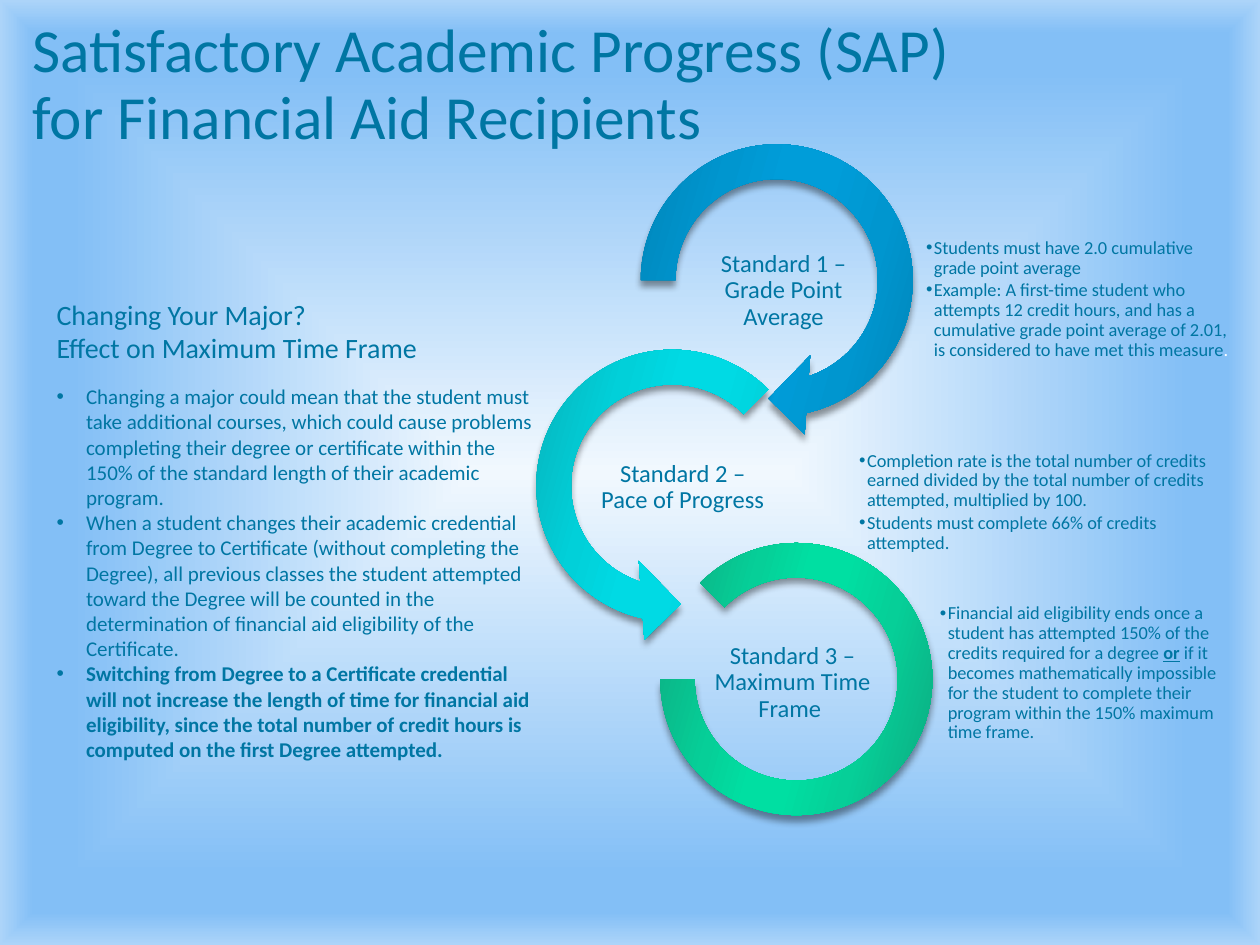
from lxml import etree
from pptx import Presentation, util as u
from pptx.dml.color import RGBColor
from pptx.enum import shapes, text
from pptx.oxml.ns import qn

COLORS = {"ink": "0076A3", "white": "FFFFFF", "shadow": "000000"}
BACKGROUND = [(0, "F1F8FE"), (85, "83BFF6"), (93, "83BFF6"), (100, "ACD4F9")]
RINGS = {  # edge, shoulder and centre of each ring's sheen
    "blue": ("0080B2", "0096CF", "009DD9"),
    "cyan": ("09AAB2", "01D0D9", "00DAE4"),
    "green": ("0DA97F", "06CF98", "00DFA2"),
}


def child(parent, tag, **attributes):
    element = etree.SubElement(parent, qn(tag))
    for key, value in attributes.items():
        element.set(key, str(value))
    return element


def write(paragraph, words, size=12, color="ink", bold=False, underline=False):
    """Add words to the paragraph; a newline becomes a line break."""
    for index, line in enumerate(words.split("\n")):
        if index:
            paragraph.add_line_break()
        run = paragraph.add_run()
        run.text = line
        font = run.font
        font.name, font.size = "Calibri", u.Pt(size)
        font.bold, font.underline = bold, underline
        font.color.rgb = RGBColor.from_string(COLORS[color])


def gradient_stops(fill, owner, stops):
    """Give fill a gradient with these stops; return it, still without direction."""
    fill.gradient()
    gradient = owner.find(".//" + qn("a:gradFill"))
    for part in list(gradient):
        gradient.remove(part)
    stop_list = child(gradient, "a:gsLst")
    for percent, color in stops:
        stop = child(stop_list, "a:gs", pos=percent * 1000)
        child(stop, "a:srgbClr", val=color)
    return gradient


class SapSlide:
    def __init__(self, slide):
        self.slide = slide

    def background(self, stops):
        gradient = gradient_stops(self.slide.background.fill, self.slide.element, stops)
        glow = child(gradient, "a:path", path="shape")
        child(glow, "a:fillToRect", l=50000, t=50000, r=50000, b=50000)

    def ring(self, kind, left, top, size, adjustments, colors):
        ring = self.slide.shapes.add_shape(
            kind, u.Pt(left), u.Pt(top), u.Pt(size), u.Pt(size))
        for index, value in enumerate(adjustments):
            ring.adjustments[index] = value
        edge, shoulder, centre = colors
        sheen = zip((0, 30, 45, 55, 73, 100),
                    (edge, shoulder, centre, centre, shoulder, edge))
        properties = ring.element.spPr
        gradient = gradient_stops(ring.fill, properties, sheen)
        child(gradient, "a:lin", ang=950000, scaled=1)
        ring.line.fill.background()
        # Soft shadow straight below
        ring.shadow.inherit = False
        shadow = child(properties.find(qn("a:effectLst")), "a:outerShdw",
                       blurRad=u.Pt(4), dist=u.Pt(3.4), dir=5400000, rotWithShape=0)
        tint = child(shadow, "a:srgbClr", val=COLORS["shadow"])
        child(tint, "a:alpha", val=40000)

    def textbox(self, box, paragraphs, size, inset=None, middle=True, spacing=0.9,
                after=0, align=text.PP_ALIGN.LEFT, indent=0):
        """Each paragraph is a list of (words, format) runs."""
        frame = self.slide.shapes.add_textbox(*map(u.Pt, box)).text_frame
        frame.word_wrap = True
        frame.vertical_anchor = text.MSO_ANCHOR.MIDDLE if middle else text.MSO_ANCHOR.TOP
        if inset is not None:
            frame.margin_left = frame.margin_right = u.Pt(inset)
            frame.margin_top = frame.margin_bottom = u.Pt(inset)
        for index, runs in enumerate(paragraphs):
            paragraph = frame.add_paragraph() if index else frame.paragraphs[0]
            paragraph.alignment, paragraph.line_spacing = align, spacing
            paragraph.space_after = u.Pt(after)
            if indent:
                self.bullet(paragraph, indent)
            for words, style in runs:
                write(paragraph, words, **{"size": size, **style})
        return frame

    def bullet(self, paragraph, indent):
        properties = paragraph._p.get_or_add_pPr()
        properties.set("marL", str(u.Pt(indent)))
        properties.set("indent", str(-u.Pt(indent)))
        child(properties, "a:buFont", typeface="Arial")
        child(properties, "a:buChar", char="•")

    def label(self, left, top, words):
        self.textbox((left, top, 100.8, 50.4), [[(words, {})]], 14, inset=0.7,
                     align=text.PP_ALIGN.CENTER)

    def details(self, box, paragraphs):
        self.textbox(box, paragraphs, 10.5, inset=0.7, after=1.5, indent=4.5)


STANDARDS = [
    {"ring": (shapes.MSO_SHAPE.CIRCULAR_ARROW, 353.5, 69.8, 180.7,
              (0.11, 11.42, 45, 108, 0.125), RINGS["blue"]),
     "box": (528.5, 118.8, 175.7, 104.4),
     "details": [
         [("Students must have 2.0 cumulative grade point average", {})],
         [("Example: A first-time student who attempts 12 credit hours, and has a "
           "cumulative grade point average of 2.01, is considered to have met this "
           "measure", {}), (".", {"color": "white"})]],
     "label": (397.4, 141.1, "Standard 1 – Grade Point Average")},
    {"ring": (shapes.MSO_SHAPE.LEFT_CIRCULAR_ARROW, 293.8, 187.2, 180.7,
              (0.11, 11.42, 63, 189, 0.125), RINGS["cyan"]),
     "box": (490.3, 250.6, 216, 72.7),
     "details": [
         [("Completion rate is the total number of credits earned divided by the "
           "total number of credits attempted, multiplied by 100.", {})],
         [("Students must complete 66% of credits attempted.", {})]],
     "label": (339.8, 253.4, "Standard 2 – Pace of Progress")},
    {"ring": (shapes.MSO_SHAPE.BLOCK_ARC, 377.3, 310.3, 155.5,
              (135, 108, 0.127), RINGS["green"]),
     "box": (536.4, 334.8, 169.9, 100.1),
     "details": [
         [("Financial aid eligibility ends once a student has attempted 150% of the "
           "credits required for a degree ", {}),
          ("or", {"bold": True, "underline": True}),
          (" if it becomes mathematically impossible for the student to complete "
           "their program within the 150% maximum time frame.", {})]],
     "label": (402.5, 365, "Standard 3 – Maximum Time Frame ")},
]

MAJOR_HEADING = ["Changing Your Major?", "Effect on Maximum Time Frame"]
MAJOR_POINTS = [
    ("Changing a major could mean that the student must take additional courses, "
     "which could cause problems completing their degree or certificate within the "
     "150% of the standard length of their academic program.", {}),
    ("When a student changes their academic credential from Degree to Certificate "
     "(without completing the Degree), all previous classes the student attempted "
     "toward the Degree will be counted in the determination of financial aid "
     "eligibility of the Certificate.", {}),
    ("Switching from Degree to a Certificate credential will not increase the length "
     "of time for financial aid eligibility, since the total number of credit hours "
     "is computed on the first Degree attempted.", {"bold": True}),
]


def main():
    deck = Presentation()
    deck.slide_width, deck.slide_height = u.Pt(720), u.Pt(540)
    sap = SapSlide(deck.slides.add_slide(deck.slide_layouts[6]))
    sap.background(BACKGROUND)

    # Title
    sap.textbox((11.5, 10, 687, 78.5), [[(
        "Satisfactory Academic Progress (SAP) \nfor Financial Aid Recipients", {})]], 35)

    # The three standards
    for standard in STANDARDS:
        sap.ring(*standard["ring"])
        sap.details(standard["box"], standard["details"])
        sap.label(*standard["label"])

    # Changing majors: heading, then bullets
    major = sap.textbox((25.2, 166.3, 291.6, 275), [[(line, {})] for line in MAJOR_HEADING],
                        16, middle=False, spacing=1.0)
    for index, (words, style) in enumerate(MAJOR_POINTS):
        point = major.add_paragraph()
        point.space_before = u.Pt(0 if index else 11)
        sap.bullet(point, 16.9)
        write(point, words, **style)

    deck.save("out.pptx")


if __name__ == "__main__":
    main()
